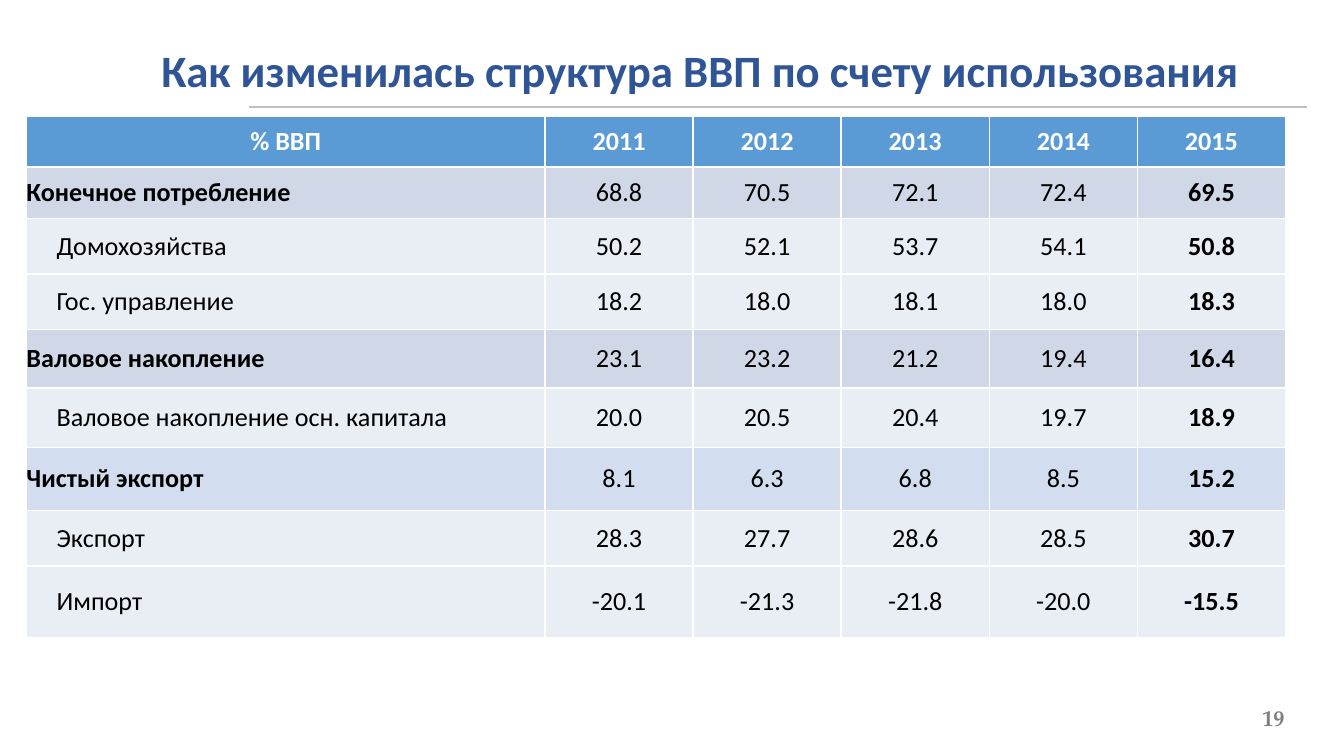
from pptx import Presentation
from pptx.dml.color import RGBColor
from pptx.enum.shapes import MSO_CONNECTOR
from pptx.enum.text import MSO_ANCHOR, PP_ALIGN
from pptx.oxml.ns import qn
from pptx.util import Cm, Pt
from lxml.etree import SubElement

YEARS = ["2011", "2012", "2013", "2014", "2015"]
HEADER_FILL, DETAIL_FILL, TOTAL_FILL, EXPORT_FILL = "5B9BD5", "E9EDF4", "D0D8E8", "D2DEEF"
HEADER_HEIGHT = 0.97
ROWS = [
    ("Конечное потребление", "68.8 70.5 72.1 72.4 69.5", TOTAL_FILL, 0.97),
    ("Домохозяйства", "50.2 52.1 53.7 54.1 50.8", DETAIL_FILL, 1.05),
    ("Гос. управление", "18.2 18.0 18.1 18.0 18.3", DETAIL_FILL, 1.05),
    ("Валовое накопление", "23.1 23.2 21.2 19.4 16.4", TOTAL_FILL, 1.1),
    ("Валовое накопление осн. капитала", "20.0 20.5 20.4 19.7 18.9", DETAIL_FILL, 1.13),
    ("Чистый экспорт", "8.1 6.3 6.8 8.5 15.2", EXPORT_FILL, 1.19),
    ("Экспорт", "28.3 27.7 28.6 28.5 30.7", DETAIL_FILL, 1.05),
    ("Импорт", "-20.1 -21.3 -21.8 -20.0 -15.5", DETAIL_FILL, 1.35),
]


def color(value):
    return RGBColor.from_string(value)


def style_paragraph(para, size, shade, bold, align, name="Calibri"):
    para.alignment = align
    font = para.font
    font.name, font.size, font.bold = name, Pt(size), bold
    font.color.rgb = color(shade)


def add_title(page, left, top, width, height):
    box = page.shapes.add_textbox(Cm(left), Cm(top), Cm(width), Cm(height))
    box.text_frame.word_wrap = True
    para = box.text_frame.paragraphs[0]
    para.text = "Как изменилась структура ВВП по счету использования"
    properties = para._p.get_or_add_pPr()
    properties.set("marL", "0")
    properties.set("indent", str(Cm(1.27)))
    style_paragraph(para, 24, "2F5597", True, PP_ALIGN.CENTER)


def add_rule(page, left, top, width):
    rule = page.shapes.add_connector(
        MSO_CONNECTOR.STRAIGHT, Cm(left), Cm(top), Cm(left + width), Cm(top))
    rule.line.color.rgb = color("BFBFBF")
    rule.line.width = Pt(1)
    SubElement(rule._element.spPr, qn("a:effectLst"))


def add_page_number(page, left, top, width, height):
    box = page.shapes.add_textbox(Cm(left), Cm(top), Cm(width), Cm(height))
    frame = box.text_frame
    frame.word_wrap = False
    frame.vertical_anchor = MSO_ANCHOR.MIDDLE
    frame.margin_left = frame.margin_right = frame.margin_top = frame.margin_bottom = 0
    para = frame.paragraphs[0]
    para.text = "19"
    style_paragraph(para, 12, "7F7F7F", True, PP_ALIGN.RIGHT, "TeX Gyre Pagella")


def add_borders(cell):
    properties = cell._tc.get_or_add_tcPr()
    for position, side in enumerate(("lnL", "lnR", "lnT", "lnB")):
        border = properties.makeelement(qn(f"a:{side}"), {"w": str(Pt(1))})
        fill = SubElement(border, qn("a:solidFill"))
        SubElement(fill, qn("a:srgbClr"), val="FFFFFF")
        properties.insert(position, border)


def fill_cell(cell, text, fill, shade, bold, align, indent=0):
    cell.fill.solid()
    cell.fill.fore_color.rgb = color(fill)
    cell.margin_left = Cm(indent)
    cell.margin_right = cell.margin_top = cell.margin_bottom = 0
    cell.vertical_anchor = MSO_ANCHOR.MIDDLE
    para = cell.text_frame.paragraphs[0]
    para.text = text
    style_paragraph(para, 14, shade, bold, align)
    add_borders(cell)


def add_gdp_table(page, left, top, width, label_width):
    heights = [HEADER_HEIGHT] + [row[-1] for row in ROWS]
    table = page.shapes.add_table(
        len(heights), len(YEARS) + 1, Cm(left), Cm(top), Cm(width), Cm(sum(heights))).table
    table.columns[0].width = Cm(label_width)
    for column in range(1, len(YEARS) + 1):
        table.columns[column].width = Cm((width - label_width) / len(YEARS))
    for row, height in zip(table.rows, heights):
        row.height = Cm(height)

    for column, text in enumerate(["% ВВП"] + YEARS):
        fill_cell(table.cell(0, column), text, HEADER_FILL, "FFFFFF", True, PP_ALIGN.CENTER)
    for row, (label, values, fill, _) in enumerate(ROWS, 1):
        detail = fill == DETAIL_FILL
        fill_cell(table.cell(row, 0), label, fill, "000000", not detail,
                  PP_ALIGN.LEFT, 0.57 if detail else 0)
        for column, value in enumerate(values.split(), 1):
            fill_cell(table.cell(row, column), value, fill, "000000",
                      column == len(YEARS), PP_ALIGN.CENTER)


def main():
    deck = Presentation()
    deck.slide_width, deck.slide_height = Cm(25.4), Cm(14.29)
    page = deck.slides.add_slide(deck.slide_layouts[6])
    add_rule(page, 4.7, 2.03, 20.01)
    add_page_number(page, 23.06, 13.44, 1.22, 0.25)
    add_gdp_table(page, 0.5, 2.19, 23.8, 9.8)
    add_title(page, 0.71, 0.69, 23.77, 1.27)
    deck.save("out.pptx")


if __name__ == "__main__":
    main()
